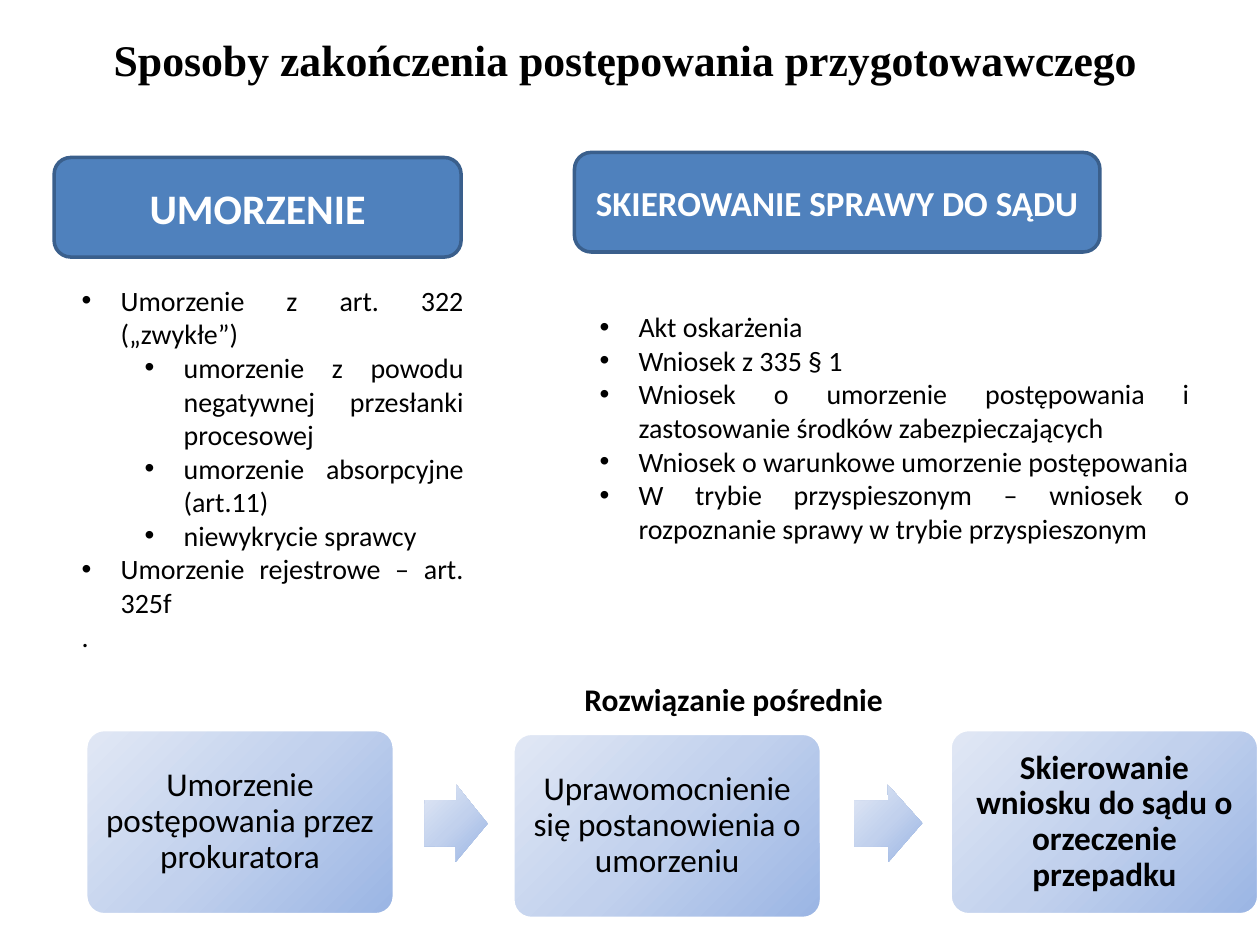
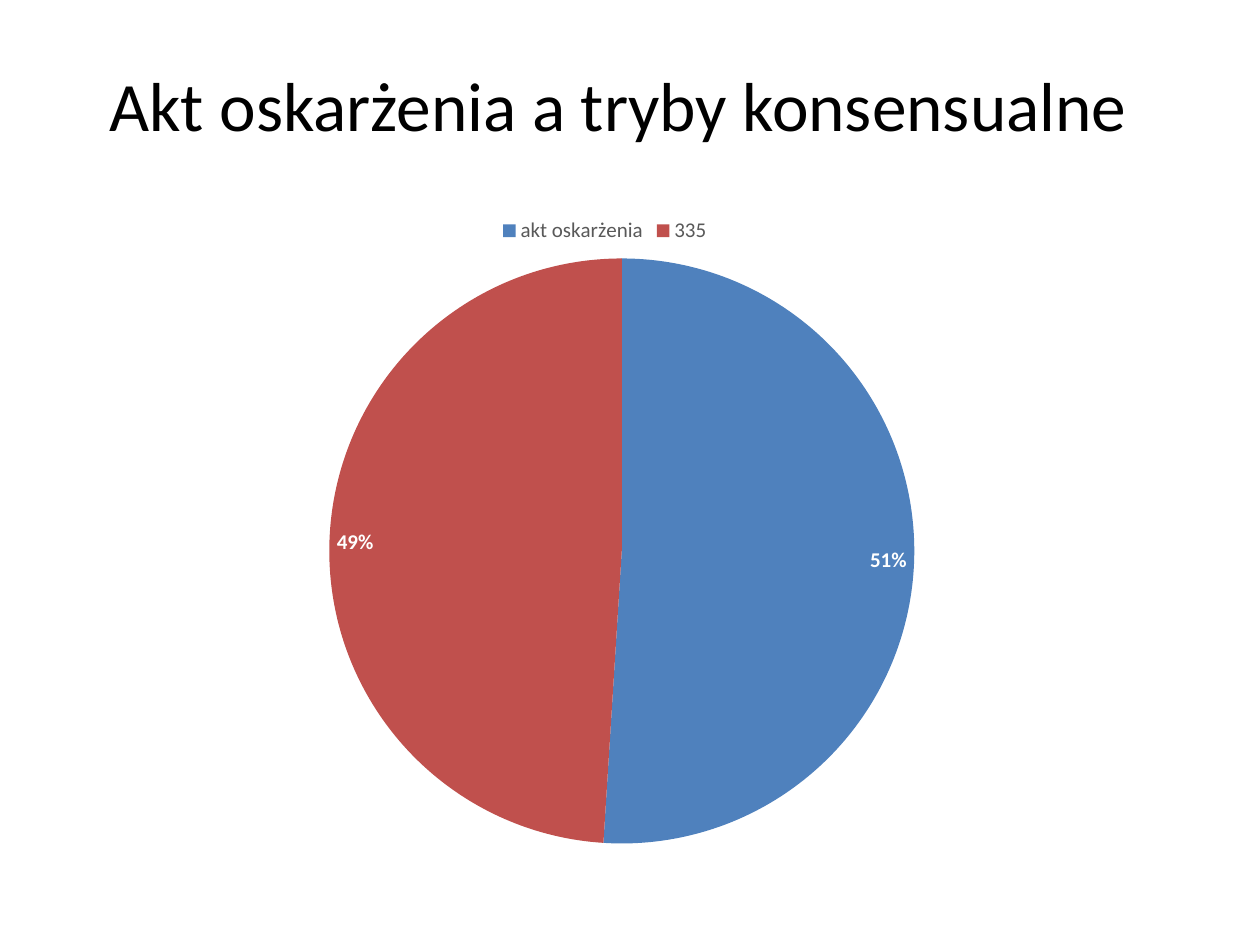
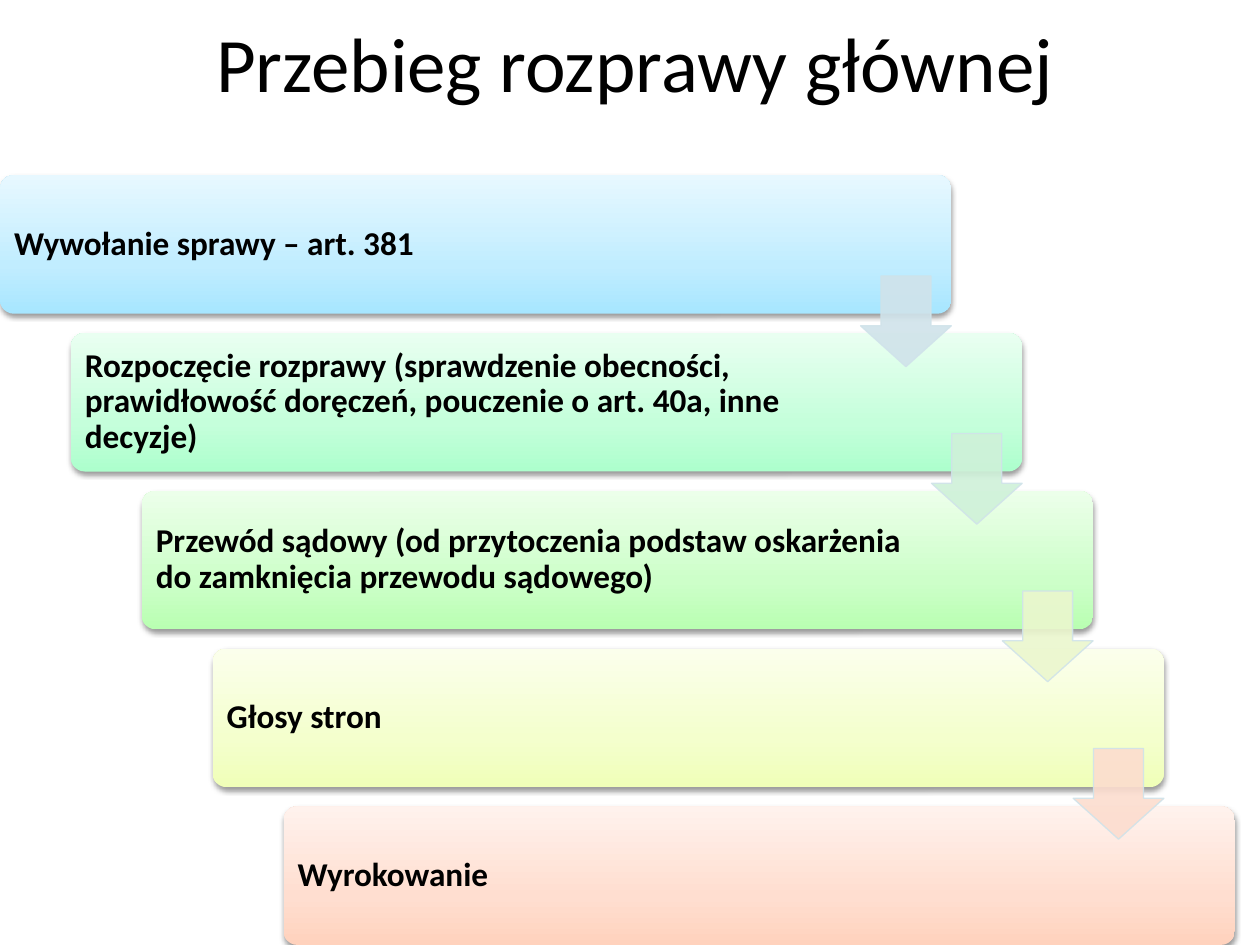
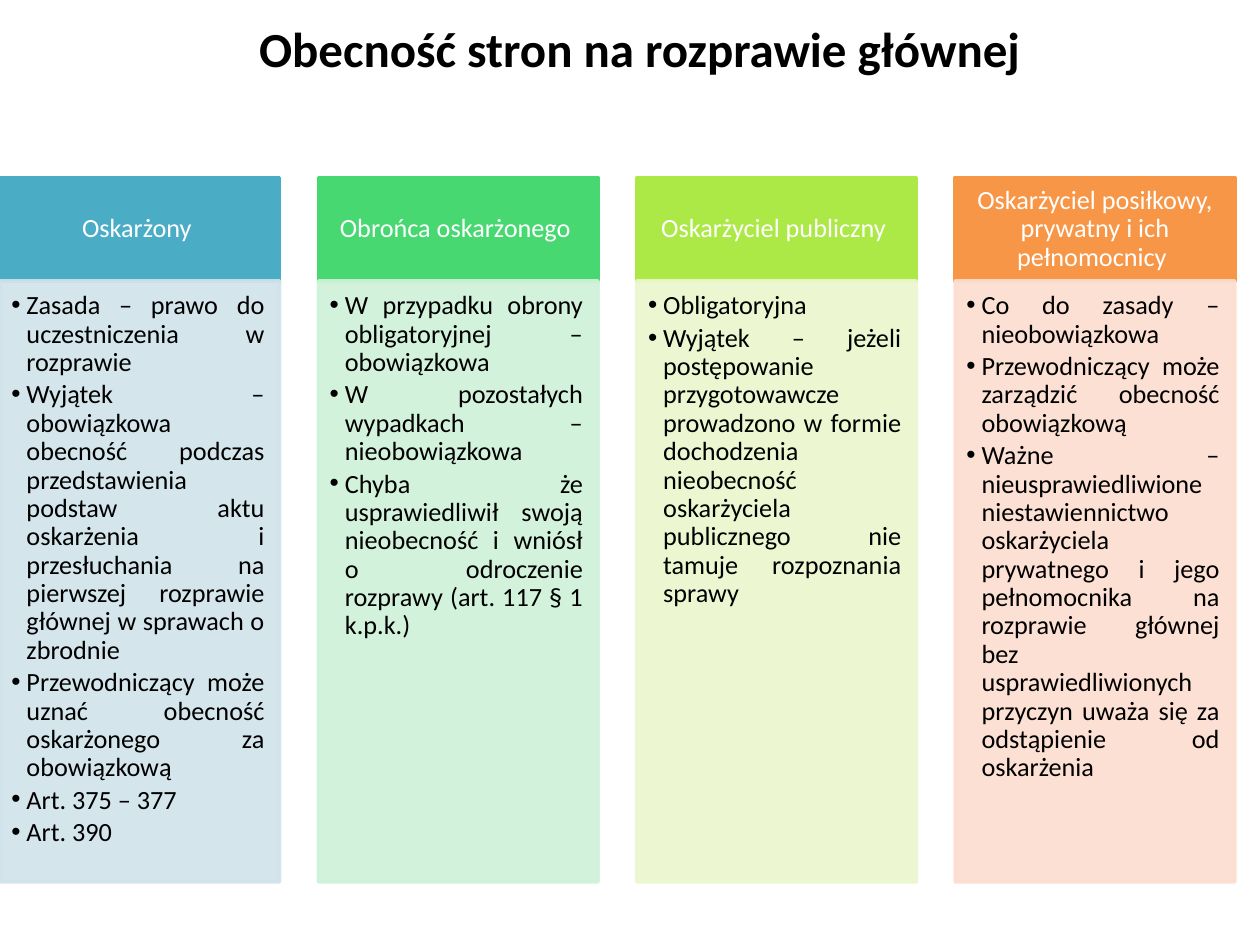
from dataclasses import dataclass

from lxml.etree import SubElement
from pptx import Presentation
from pptx.chart.data import CategoryChartData
from pptx.dml.color import RGBColor
from pptx.enum.chart import XL_CHART_TYPE, XL_LABEL_POSITION, XL_LEGEND_POSITION
from pptx.enum.shapes import MSO_SHAPE as Shape
from pptx.enum.text import MSO_ANCHOR as Anchor, PP_ALIGN as Align
from pptx.oxml.ns import qn
from pptx.util import Inches, Pt


@dataclass(frozen=True)
class Theme:
    font: str = "Calibri"
    serif: str = "Times New Roman"
    black: str = "000000"
    white: str = "FFFFFF"
    grey: str = "595959"
    blue: str = "4F81BD"
    red: str = "C0504D"
    dark_blue: str = "3A5F8C"
    pale_blue: str = "D0E3EA"
    pale_green: str = "CFF1D9"
    pale_lime: str = "EBF7CE"
    pale_orange: str = "FCDDCF"
    column_heads: tuple = ("4BACC6", "47D872", "ACE946", "F79646")
    flow_gradient: tuple = ((0, "9AB5E4"), (50, "C2D1ED"), (100, "E1E8F5"))
    step_gradients: tuple = (
        ("A7E6FF", "C1EDFF", "E7F8FF"),
        ("ADFFCD", "C5FFDB", "E9FFF1"),
        ("B9FFB2", "CDFFC9", "ECFFEA"),
        ("F0FFB8", "F4FFCD", "FBFFEC"),
        ("FFD2BD", "FFDED0", "FFF2ED"),
    )
    label_size: float = 12
    column_size: float = 15
    list_size: float = 16
    caption_size: float = 18
    box_size: float = 19

    @property
    def pale(self):
        return self.pale_blue, self.pale_green, self.pale_lime, self.pale_orange


THEME = Theme()
BOX_INSETS = (0.08, 0.08, 0.08, 0.08)


def rgb(code):
    return RGBColor.from_string(code)


def style_font(font, size, color=THEME.black, bold=False, name=THEME.font):
    font.name, font.size, font.bold = name, Pt(size), bold
    font.color.rgb = rgb(color)


def set_bullet(para, left, hanging):
    properties = para._p.get_or_add_pPr()
    properties.set("marL", str(Inches(left)))
    properties.set("indent", str(-Inches(hanging)))
    SubElement(properties, qn("a:buFont"), typeface="Arial")
    SubElement(properties, qn("a:buChar"), char="•")


def write(box, text, size, align=Align.LEFT, anchor=Anchor.MIDDLE, insets=None,
          spacing=None, after=None, bullets=None, **font):
    """Fill a box; text is a string or a list, bullets gives (left, hanging, level) or None per line."""
    lines = [text] if isinstance(text, str) else text
    frame = box.text_frame
    frame.word_wrap, frame.vertical_anchor = True, anchor
    if insets:
        (frame.margin_left, frame.margin_top,
         frame.margin_right, frame.margin_bottom) = map(Inches, insets)
    for index, line in enumerate(lines):
        para = frame.add_paragraph() if index else frame.paragraphs[0]
        para.alignment = align
        if spacing:
            para.line_spacing = spacing
        if after:
            para.space_after = Pt(after)
        if bullets and bullets[index]:
            left, hanging, para.level = bullets[index]
            set_bullet(para, left, hanging)
        span = para.add_run()
        span.text = line
        style_font(span.font, size, **font)


def add_text(page, at, text, size, **format):
    box = page.shapes.add_textbox(*map(Inches, at))
    write(box, text, size, **format)
    return box


def add_title(page, at, text, size, **font):
    add_text(page, at, text, size, align=Align.CENTER, **font)


def add_block(page, kind, at, fill=None, line=None, line_width=2, adjust=()):
    block = page.shapes.add_shape(kind, *map(Inches, at))
    block.shadow.inherit = False
    for index, value in enumerate(adjust):
        block.adjustments[index] = value
    if fill:
        block.fill.solid()
        block.fill.fore_color.rgb = rgb(fill)
    if line:
        block.line.color.rgb = rgb(line)
        block.line.width = Pt(line_width)
    else:
        block.line.fill.background()
    return block


def set_gradient(block, stops, angle):
    block.fill.gradient()
    gradient = block._element.spPr.find(qn("a:gradFill"))
    for child in list(gradient):
        gradient.remove(child)
    stop_list = SubElement(gradient, qn("a:gsLst"))
    for position, color in stops:
        stop = SubElement(stop_list, qn("a:gs"), pos=str(position * 1000))
        SubElement(stop, qn("a:srgbClr"), val=color)
    SubElement(gradient, qn("a:lin"), ang=str(angle * 60000), scaled="0")


def set_opacity(block, percent):
    """Apply one opacity to both fill and line."""
    for color in list(block._element.spPr.iter(qn("a:srgbClr"))):
        SubElement(color, qn("a:alpha"), val=str(percent * 1000))


def add_shadow(block):
    effects = block._element.spPr.find(qn("a:effectLst"))
    shadow = SubElement(effects, qn("a:outerShdw"), blurRad=str(Pt(3.1)),
                        dist=str(Pt(1.6)), dir="5400000", rotWithShape="0")
    color = SubElement(shadow, qn("a:srgbClr"), val=THEME.black)
    SubElement(color, qn("a:alpha"), val="38000")


def add_header(page, at, text, size):
    header = add_block(page, Shape.ROUNDED_RECTANGLE, at, THEME.blue, THEME.dark_blue)
    write(header, text, size, align=Align.CENTER, color=THEME.white, bold=True)


def add_flow_box(page, left, top, text, bold=False):
    box = add_block(page, Shape.ROUNDED_RECTANGLE, (left, top, 2.45, 1.47),
                    line=THEME.white, adjust=(0.1,))
    set_gradient(box, THEME.flow_gradient, 225)
    write(box, text, THEME.box_size, align=Align.CENTER, insets=BOX_INSETS,
          spacing=0.9, bold=bold)


def add_flow_arrow(page, left, width, rotation):
    arrow = add_block(page, Shape.RIGHT_ARROW, (left, 6.23, width, 0.61), adjust=(0.6, 0.5))
    arrow.rotation = rotation
    set_gradient(arrow, THEME.flow_gradient, 225)


def add_step(page, left, top, text, colors):
    step = add_block(page, Shape.ROUNDED_RECTANGLE, (left, top, 7.55, 1.1), adjust=(0.1,))
    set_gradient(step, zip((0, 35, 100), colors), 270)
    add_shadow(step)
    write(step, text, THEME.box_size, insets=(0.08, 0.08, 1.36, 0.08),
          spacing=0.9, bold=True)


def add_step_arrow(page, left, top, color):
    arrow = add_block(page, Shape.DOWN_ARROW, (left, top, 0.72, 0.72), color,
                      THEME.pale_blue, 0.75, (0.55, 0.45))
    set_opacity(arrow, 90)


def add_column(page, left, heading, points, head_color, body_color):
    head = add_block(page, Shape.RECTANGLE, (left, 1.41, 2.22, 0.82), head_color, head_color)
    write(head, heading, THEME.column_size, align=Align.CENTER, spacing=0.9,
          insets=(0.12, 0.07, 0.12, 0.07), color=THEME.white)
    body = add_block(page, Shape.RECTANGLE, (left, 2.23, 2.22, 4.77), body_color, body_color)
    set_opacity(body, 90)
    write(body, points, THEME.column_size, align=Align.JUSTIFY, anchor=Anchor.TOP,
          insets=(0.09, 0.09, 0.12, 0.13), spacing=0.9, after=2.25,
          bullets=[(0.12, 0.12, 1)] * len(points))


def set_plot_layout(chart, **fractions):
    plot_area = chart._chartSpace.chart.plotArea
    layout = plot_area.find(qn("c:layout"))
    if layout is None:
        layout = SubElement(plot_area, qn("c:layout"))
        plot_area.insert(0, layout)
    manual = SubElement(layout, qn("c:manualLayout"))
    settings = dict(layoutTarget="inner", xMode="edge", yMode="edge", **fractions)
    for name, value in settings.items():
        SubElement(manual, qn(f"c:{name}"), val=str(value))


def add_pie(page, at, shares, colors):
    data = CategoryChartData()
    data.categories = list(shares)
    data.add_series("Series 1", list(shares.values()))
    chart = page.shapes.add_chart(XL_CHART_TYPE.PIE, *map(Inches, at), data).chart
    style_font(chart.font, 10)
    chart.has_title = False
    chart.has_legend = True
    chart.legend.position = XL_LEGEND_POSITION.TOP
    chart.legend.include_in_layout = False
    style_font(chart.legend.font, THEME.label_size, THEME.grey)
    set_plot_layout(chart, x=0.263, y=0.083, w=0.502, h=0.893)
    plot = chart.plots[0]
    plot.vary_by_categories = True
    for index, color in enumerate(colors):
        fill = plot.series[0].points[index].format.fill
        fill.solid()
        fill.fore_color.rgb = rgb(color)
    plot.has_data_labels = True
    labels = plot.data_labels
    labels.show_percentage, labels.show_value = True, False
    labels.number_format, labels.number_format_is_linked = "0%", False
    labels.position = XL_LABEL_POSITION.INSIDE_END
    style_font(labels.font, THEME.label_size, THEME.white, bold=True)


def build_endings(page):
    add_title(page, (0.01, 0, 9.99, 0.94), "Sposoby zakończenia postępowania przygotowawczego ",
              25, bold=True, name=THEME.serif)
    add_header(page, (0.43, 1.25, 3.23, 0.79), "UMORZENIE", 24)
    add_header(page, (4.56, 1.21, 4.17, 0.79), "SKIEROWANIE SPRAWY DO SĄDU", 20)
    outer, inner = (0.31, 0.31, 0), (0.81, 0.31, 1)
    list_format = dict(size=THEME.list_size, align=Align.JUSTIFY, anchor=Anchor.TOP)
    add_text(page, (0.55, 2.2, 3.23, 3.6), [
        "Umorzenie z art. 322 („zwykłe”)",
        "umorzenie z powodu negatywnej przesłanki procesowej ",
        "umorzenie absorpcyjne (art.11)",
        "niewykrycie sprawcy",
        "Umorzenie rejestrowe – art. 325f",
        ".",
    ], bullets=[outer, inner, inner, inner, outer, None], **list_format)
    add_text(page, (4.66, 2.41, 4.88, 2.52), [
        "Akt oskarżenia ",
        "Wniosek z 335 § 1 ",
        "Wniosek o umorzenie postępowania i zastosowanie środków zabezpieczających ",
        "Wniosek o warunkowe umorzenie postępowania",
        "W trybie przyspieszonym – wniosek o rozpoznanie sprawy w trybie przyspieszonym ",
    ], bullets=[outer] * 5, **list_format)
    add_text(page, (4.54, 5.35, 5.12, 0.71), "Rozwiązanie pośrednie", THEME.caption_size,
             anchor=Anchor.TOP, bold=True)
    add_flow_box(page, 0.68, 5.79, "Umorzenie postępowania przez prokuratora")
    add_flow_arrow(page, 3.37, 0.5, 0.5)
    add_flow_box(page, 4.07, 5.82, "Uprawomocnienie się postanowienia o umorzeniu")
    add_flow_arrow(page, 6.78, 0.54, 359.5)
    add_flow_box(page, 7.54, 5.79, "Skierowanie wniosku do sądu o orzeczenie przepadku", bold=True)


def build_modes(page):
    add_title(page, (0.43, 0.21, 9.08, 1.22), "Akt oskarżenia a tryby konsensualne ", 39.6)
    add_pie(page, (-0.04, 1.62, 9.68, 5.2), {"akt oskarżenia": 51, "335": 49},
            (THEME.blue, THEME.red))


def build_trial_steps(page):
    add_title(page, (0.43, -0.5, 9.22, 1.98), "Przebieg rozprawy głównej", 44)
    steps = (
        "Wywołanie sprawy – art. 381",
        "Rozpoczęcie rozprawy (sprawdzenie obecności, prawidłowość doręczeń, "
        "pouczenie o art. 40a, inne decyzje)",
        "Przewód sądowy (od przytoczenia podstaw oskarżenia do zamknięcia przewodu sądowego)",
        "Głosy stron",
        "Wyrokowanie",
    )
    shift = 2.25 / (len(steps) - 1)
    drop = 5.01 / (len(steps) - 1)
    for index, (text, colors) in enumerate(zip(steps, THEME.step_gradients)):
        add_step(page, index * shift, 1.39 + index * drop, text, colors)
    for index, color in enumerate(THEME.pale):
        add_step_arrow(page, 6.83 + index * shift, 2.19 + index * 1.25, color)


def build_attendance(page):
    add_title(page, (-0.28, 0, 10.71, 0.76), "Obecność stron na rozprawie głównej", 28, bold=True)
    columns = {
        "Oskarżony ": [
            "Zasada – prawo do uczestniczenia w rozprawie ",
            "Wyjątek – obowiązkowa obecność podczas przedstawienia podstaw aktu oskarżenia "
            "i przesłuchania na pierwszej rozprawie głównej w sprawach o zbrodnie ",
            "Przewodniczący może uznać obecność oskarżonego za obowiązkową ",
            "Art. 375 – 377",
            "Art. 390",
        ],
        "Obrońca oskarżonego ": [
            "W przypadku obrony obligatoryjnej – obowiązkowa ",
            "W pozostałych wypadkach – nieobowiązkowa",
            "Chyba że usprawiedliwił swoją nieobecność i wniósł o odroczenie rozprawy "
            "(art. 117 § 1 k.p.k.)",
        ],
        "Oskarżyciel publiczny ": [
            "Obligatoryjna ",
            "Wyjątek – jeżeli postępowanie przygotowawcze prowadzono w formie dochodzenia "
            "nieobecność oskarżyciela publicznego nie tamuje rozpoznania sprawy ",
        ],
        "Oskarżyciel posiłkowy, prywatny i ich pełnomocnicy ": [
            "Co do zasady – nieobowiązkowa ",
            "Przewodniczący może zarządzić obecność obowiązkową ",
            "Ważne – nieusprawiedliwione niestawiennictwo oskarżyciela prywatnego i jego "
            "pełnomocnika na rozprawie głównej bez usprawiedliwionych przyczyn uważa się "
            "za odstąpienie od oskarżenia",
        ],
    }
    pitch = 7.58 / (len(columns) - 1)
    colors = zip(THEME.column_heads, THEME.pale)
    for index, ((heading, points), pair) in enumerate(zip(columns.items(), colors)):
        add_column(page, index * pitch, heading, points, *pair)


def main():
    deck = Presentation()
    deck.slide_width, deck.slide_height = Inches(10), Inches(7.5)
    for build in (build_endings, build_modes, build_trial_steps, build_attendance):
        build(deck.slides.add_slide(deck.slide_layouts[6]))
    deck.save("out.pptx")


if __name__ == "__main__":
    main()
